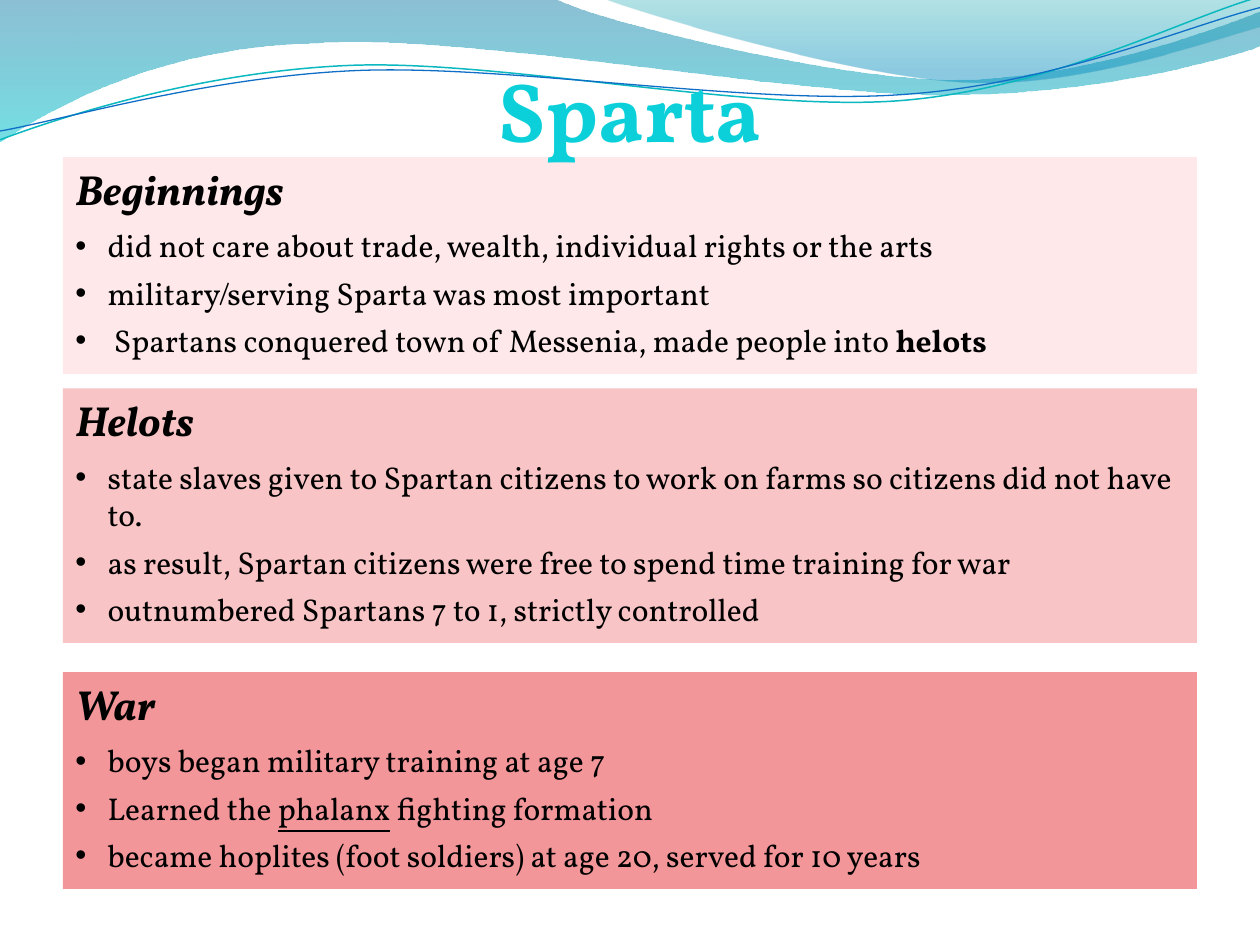
import lxml.etree
import math
import pptx
import pptx.dml.color
import pptx.enum.shapes
import pptx.enum.text
import pptx.oxml.ns
import pptx.util

FONT, BULLET_FONT = "Vollkorn", "Arial"
COLORS = {"title": "0BD0D9", "text": "000000", "teal": "0AB8BF", "blue": "0F6FC6",
          "Beginnings": "FEE8EA", "Helots": "F8C4C5", "War": "F29699"}
PLAIN, BOLD, UNDERLINED = {}, {"bold": True}, {"underline": True}
HEADING = {"bold": True, "italic": True}

BOXES = [
    ("Beginnings", 3.17, 4.37, [
        [("did not care about trade, wealth, individual rights or the arts", PLAIN)],
        [("military/serving Sparta was most important", PLAIN)],
        [(" Spartans conquered town of Messenia, made people into ", PLAIN), ("helots", BOLD)],
    ]),
    ("War", 13.55, 4.37, [
        [("boys began military training at age 7", PLAIN)],
        [("Learned the ", PLAIN), ("phalanx", UNDERLINED), (" fighting formation", PLAIN)],
        [("became hoplites (foot soldiers) at age 20, served for 10 years", PLAIN)],
    ]),
    ("Helots", 7.83, 5.13, [
        [("state slaves given to Spartan citizens to work on farms so citizens did not have to.", PLAIN)],
        [("as result, Spartan citizens were free to spend time training for war", PLAIN)],
        [("outnumbered Spartans 7 to 1, strictly controlled", PLAIN)],
    ]),
]

WAVES = [
    ((-0.01, -0.01, 10.02, 1.14),
     [(0, 0), (4.4, -0.01), (4.76, 0.17, 6.64, 0.63, 7.58, 0.63),
      (8.53, 0.63, 9.58, 0.26, 10, 0.09), (10.01, 0.36),
      (9.83, 0.44, 8.7, 0.76, 7.46, 0.75), (6.22, 0.75, 3.82, 0.28, 2.57, 0.34),
      (1.29, 0.36, 0.46, 0.83, -0.01, 1.13), (0, 0)],
     [(0, "0074A1", 45), (1, "00C6CF", 55)]),
    ((4.79, -0.01, 5.21, 0.7),
     [(4.79, -0.01), (5.09, 0.11, 6.82, 0.62, 7.69, 0.65),
      (8.56, 0.69, 9.61, 0.32, 10, 0.21), (10, 0), (4.79, -0.01)],
     [(0, "00A1A9", 30), (0.8, "008BBF", 45)]),
]
STRANDS = [
    ((-0.02, 0.22, 10.02, 0.71),
     [(0, 1.11), (0.48, 0.93, 1.58, 0.57, 2.77, 0.52), (3.95, 0.47, 5.93, 0.89, 7.13, 0.8),
      (8.33, 0.71, 9.38, 0.15, 9.98, -0.02)], "teal", 0.85),
    ((-0.02, 0.3, 10.03, 0.58),
     [(0, 1.04), (0.47, 0.96, 1.64, 0.61, 2.83, 0.56), (4.03, 0.51, 5.97, 0.84, 7.17, 0.75),
      (8.36, 0.67, 9.41, 0.21, 10, 0.06)], "blue", 0.75),
]
STRAND_ROTATION = 357.3
CM_PER_INCH = 2.54


def rgb(value):
    return pptx.dml.color.RGBColor.from_string(value)


def add_xml(parent, tag, **attrs):
    return lxml.etree.SubElement(parent, pptx.oxml.ns.qn(tag), attrs)


def emu(inches):
    return pptx.util.Cm(inches * CM_PER_INCH)


def add_outline(s, frame, segments, close, rotation=0):
    left, top, width, height = frame
    mid_x, mid_y = left + width / 2, top + height / 2
    cos, sin = math.cos(math.radians(rotation)), math.sin(math.radians(rotation))

    def local(x, y):
        dx, dy = x - mid_x, y - mid_y
        return emu(dx * cos + dy * sin + width / 2), emu(dy * cos - dx * sin + height / 2)

    builder = s.shapes.build_freeform(0, 0)
    builder.add_line_segments([(emu(width), emu(height))], close=close)
    sp = builder.convert_to_shape()
    for name, value in zip(("left", "top", "width", "height"), frame):
        setattr(sp, name, emu(value))
    sp.rotation = rotation
    sp.shadow.inherit = False

    outline = next(sp._element.spPr.iter(pptx.oxml.ns.qn("a:path")))
    for child in list(outline):
        outline.remove(child)
    for i, seg in enumerate(segments):
        tag = "a:moveTo" if i == 0 else "a:lnTo" if len(seg) == 2 else "a:cubicBezTo"
        command = add_xml(outline, tag)
        for x, y in zip(seg[::2], seg[1::2]):
            px, py = local(x, y)
            add_xml(command, "a:pt", x=str(px), y=str(py))
    if close:
        add_xml(outline, "a:close")
    return sp


def add_wave(s, frame, segments, stops):
    sp = add_outline(s, frame, segments, True)
    sp.line.fill.background()
    sp.fill.gradient()
    sp.fill.gradient_angle = 270
    for stop, (position, color, alpha) in zip(sp.fill.gradient_stops, stops):
        stop.position = position
        stop.color.rgb = rgb(color)
    for clr, (position, color, alpha) in zip(sp._element.spPr.iter(pptx.oxml.ns.qn("a:srgbClr")), stops):
        add_xml(clr, "a:alpha", val=str(alpha * 1000))


def add_strand(s, frame, segments, color, width):
    sp = add_outline(s, frame, segments, False, STRAND_ROTATION)
    sp.fill.background()
    sp.line.color.rgb = rgb(COLORS[color])
    sp.line.width = pptx.util.Pt(width)


def add_run(p, text, size, color, formats):
    r = p.add_run()
    r.text = text
    r.font.color.rgb = rgb(COLORS[color])
    for name, value in {"name": FONT, "size": pptx.util.Pt(size), **formats}.items():
        setattr(r.font, name, value)


def add_box(s, heading, top, height, bullets):
    sp = s.shapes.add_shape(pptx.enum.shapes.MSO_SHAPE.RECTANGLE, pptx.util.Cm(1.27),
                            pptx.util.Cm(top), pptx.util.Cm(22.86), pptx.util.Cm(height))
    sp.shadow.inherit = False
    sp.fill.solid()
    sp.fill.fore_color.rgb = rgb(COLORS[heading])
    sp.line.fill.background()
    tf = sp.text_frame
    tf.word_wrap = True
    tf.auto_size = pptx.enum.text.MSO_AUTO_SIZE.SHAPE_TO_FIT_TEXT
    tf.vertical_anchor = pptx.enum.text.MSO_ANCHOR.TOP
    for i, runs in enumerate([[(heading, HEADING)]] + bullets):
        p = tf.paragraphs[0] if i == 0 else tf.add_paragraph()
        p.alignment = pptx.enum.text.PP_ALIGN.LEFT
        pPr = p._p.get_or_add_pPr()
        indent = pptx.util.Cm(0.65)
        pPr.set("marL", str(indent))
        pPr.set("indent", str(-indent))
        add_xml(add_xml(pPr, "a:spcAft"), "a:spcPct", val="30000")
        if i:
            add_xml(pPr, "a:buFont", typeface=BULLET_FONT)
            add_xml(pPr, "a:buChar", char="•")
        for text, formats in runs:
            add_run(p, text, 18 if i else 24, "text", formats)


def add_title(s, text):
    sp = s.shapes.add_textbox(*(pptx.util.Cm(v) for v in (1.7, 1.06, 22.02, 1.47)))
    tf = sp.text_frame
    tf.word_wrap = True
    p = tf.paragraphs[0]
    p.alignment = pptx.enum.text.PP_ALIGN.CENTER
    add_run(p, text, 48, "title", BOLD)


def main():
    prs = pptx.Presentation()
    prs.slide_width, prs.slide_height = pptx.util.Cm(25.4), pptx.util.Cm(19.05)
    s = prs.slides.add_slide(prs.slide_layouts[6])
    for wave in WAVES:
        add_wave(s, *wave)
    for strand in STRANDS:
        add_strand(s, *strand)
    for box in BOXES:
        add_box(s, *box)
    add_title(s, "Sparta")
    prs.save("out.pptx")


if __name__ == "__main__":
    main()
